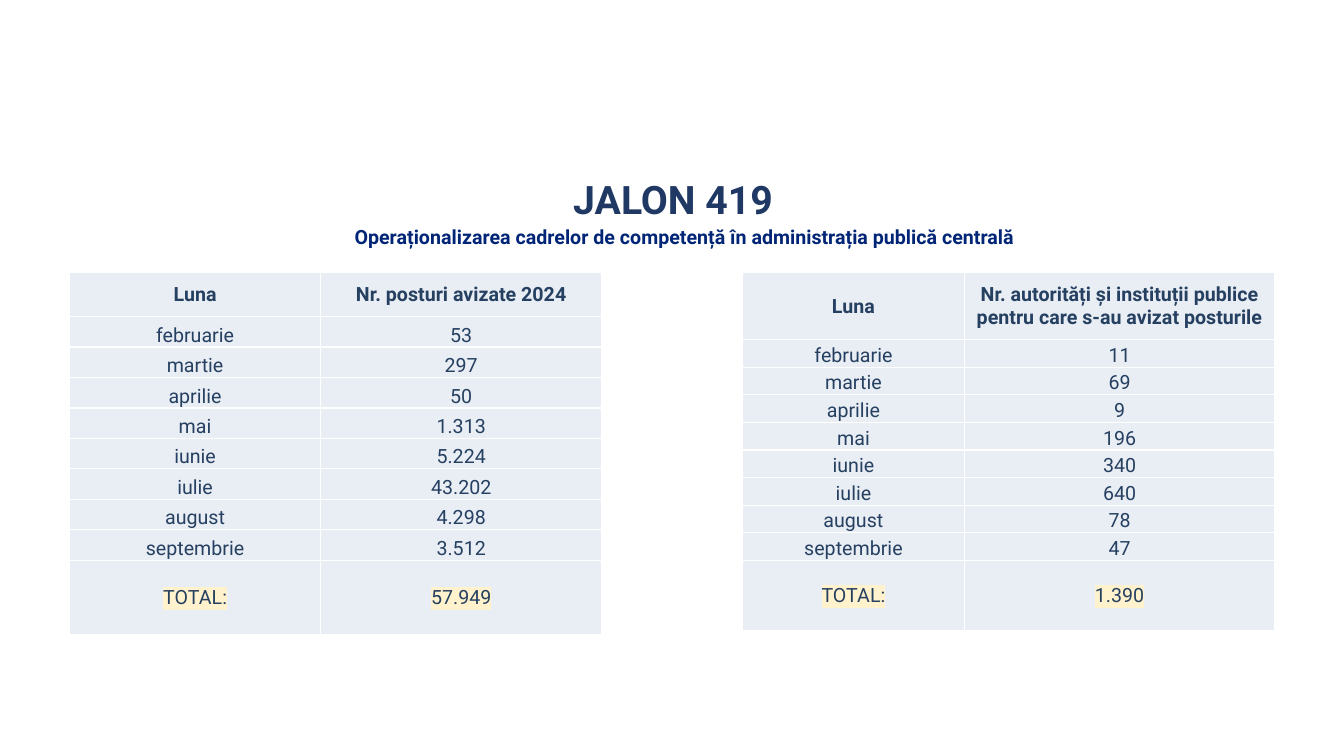
from lxml.etree import SubElement
from pptx import Presentation
from pptx.dml.color import RGBColor
from pptx.enum.text import MSO_ANCHOR, MSO_AUTO_SIZE, PP_ALIGN
from pptx.oxml.ns import qn
from pptx.util import Inches, Pt

FONT = "Roboto"
NAVY = RGBColor(0x20, 0x38, 0x64)
BLUE = RGBColor(0x00, 0x25, 0x76)
SLATE = RGBColor(0x25, 0x40, 0x61)
CELL_FILL = RGBColor(0xE9, 0xED, 0xF4)
HIGHLIGHT = RGBColor(0xFF, 0xF2, 0xCC)
WHITE = RGBColor(0xFF, 0xFF, 0xFF)

MONTHS = ["februarie", "martie", "aprilie", "mai", "iunie", "iulie", "august", "septembrie"]
POSTS = ["53", "297", "50", "1.313", "5.224", "43.202", "4.298", "3.512"]
INSTITUTIONS = ["11", "69", "9", "196", "340", "640", "78", "47"]


def write(frame, text, size, color, bold):
    """Fill a text frame with one centred paragraph and return its run."""
    paragraph = frame.paragraphs[0]
    paragraph.alignment = PP_ALIGN.CENTER
    paragraph.space_before = Pt(0)
    run = paragraph.add_run()
    run.text = text
    font_format = {"name": FONT, "size": Pt(size), "bold": bold}
    for attribute, value in font_format.items():
        setattr(run.font, attribute, value)
    run.font.color.rgb = color
    return run


def place_heading(placeholder, box, text, size, color):
    left, top, width, height = map(Inches, box)
    geometry = {"left": left, "top": top, "width": width, "height": height}
    for attribute, value in geometry.items():
        setattr(placeholder, attribute, value)
    frame = placeholder.text_frame
    frame_format = {"word_wrap": True, "auto_size": MSO_AUTO_SIZE.NONE,
                    "vertical_anchor": MSO_ANCHOR.TOP}
    for attribute, value in frame_format.items():
        setattr(frame, attribute, value)
    write(frame, text, size, color, True)


def add_borders(cell):
    properties = cell._tc.get_or_add_tcPr()
    for side in ("a:lnL", "a:lnR", "a:lnT", "a:lnB"):
        line = SubElement(properties, qn(side), w=str(Pt(1)))
        fill = SubElement(line, qn("a:solidFill"))
        SubElement(fill, qn("a:srgbClr"), val=str(WHITE))


def highlight(run):
    text_fill = run.font._element.find(qn("a:solidFill"))
    mark = SubElement(run.font._element, qn("a:highlight"))
    SubElement(mark, qn("a:srgbClr"), val=str(HIGHLIGHT))
    text_fill.addnext(mark)


def add_month_table(slide, box, month_width, header_height, total_height,
                    value_header, values, total):
    left, top, width, height = box
    rows = [("Luna", value_header), *zip(MONTHS, values), ("TOTAL:", total)]
    table = slide.shapes.add_table(len(rows), 2, *map(Inches, box)).table

    # Column widths and row heights
    table.columns[0].width = Inches(month_width)
    table.columns[1].width = Inches(width - month_width)
    month_height = (height - header_height - total_height) / len(MONTHS)
    heights = [header_height, *[month_height] * len(MONTHS), total_height]

    # Cells
    last = len(rows) - 1
    for row, (texts, row_height) in enumerate(zip(rows, heights)):
        table.rows[row].height = Inches(row_height)
        for column, text in enumerate(texts):
            cell = table.cell(row, column)
            add_borders(cell)
            cell.fill.solid()
            cell.fill.fore_color.rgb = CELL_FILL
            cell_format = {
                "margin_left": Inches(0.01), "margin_right": Inches(0.01),
                "margin_top": Inches(0.01), "margin_bottom": 0,
                "vertical_anchor": MSO_ANCHOR.MIDDLE if row in (0, last) else MSO_ANCHOR.BOTTOM,
            }
            for attribute, value in cell_format.items():
                setattr(cell, attribute, value)
            run = write(cell.text_frame, text, 14, SLATE, row == 0)
            if row == last:
                highlight(run)


def main():
    presentation = Presentation()
    presentation.slide_width = Inches(13.33)
    presentation.slide_height = Inches(7.5)
    slide = presentation.slides.add_slide(presentation.slide_layouts[0])

    # Title and subtitle
    title, subtitle = slide.placeholders
    place_heading(title, (3.6, 1.69, 6.15, 0.57), "JALON 419", 28, NAVY)
    place_heading(subtitle, (2.85, 2.18, 7.88, 0.52),
                  "Operaționalizarea cadrelor de competență în administrația publică centrală",
                  14, BLUE)

    # Approved posts on the left, institutions on the right
    add_month_table(slide, (0.69, 2.7, 5.28, 3.6), 2.49, 0.44, 0.74,
                    "Nr. posturi avizate 2024", POSTS, "57.949")
    add_month_table(slide, (7.36, 2.7, 5.28, 3.56), 2.21, 0.67, 0.7,
                    "Nr. autorități și instituții publice pentru care s-au avizat posturile",
                    INSTITUTIONS, "1.390")

    presentation.save("out.pptx")


if __name__ == "__main__":
    main()
